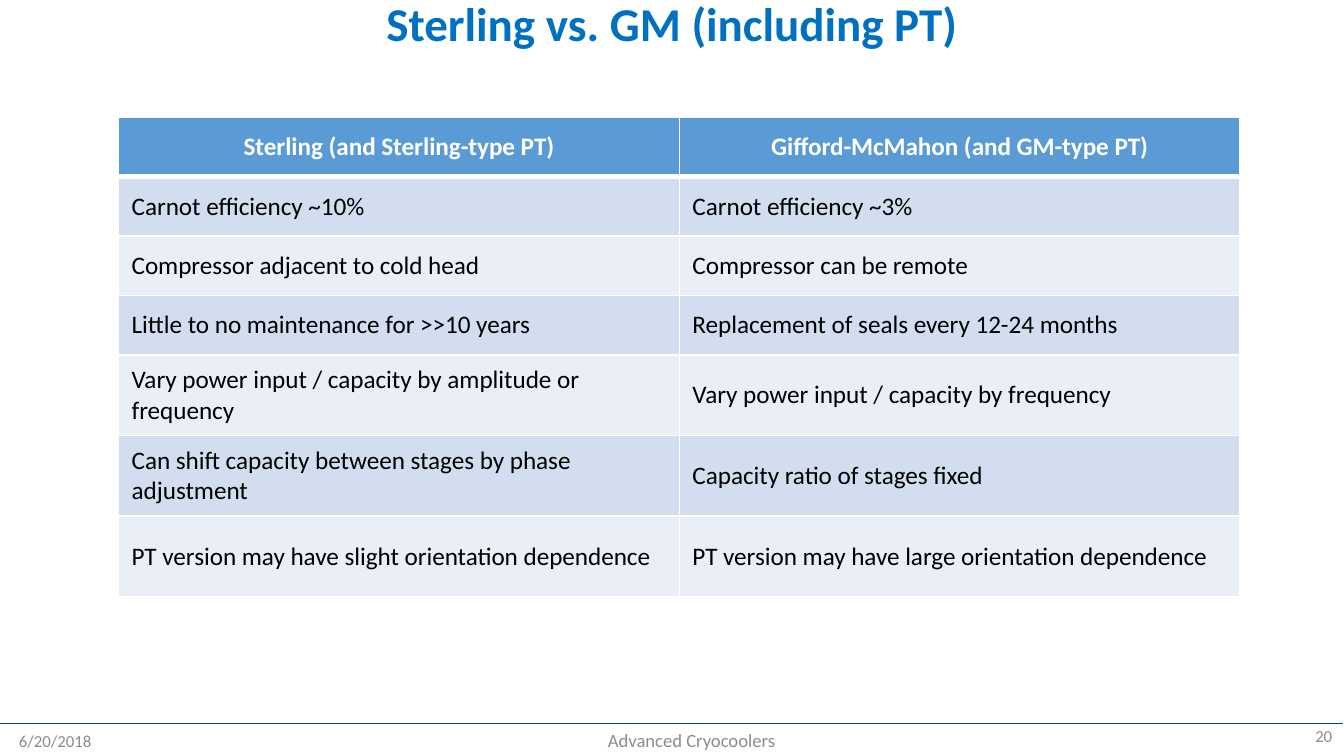
from dataclasses import dataclass

from lxml.etree import SubElement
from pptx import Presentation
from pptx.dml.color import RGBColor
from pptx.enum.text import MSO_ANCHOR, PP_ALIGN
from pptx.oxml.ns import qn
from pptx.util import Pt

SCALE = 2286


@dataclass(frozen=True)
class Theme:
    font: str = "Calibri"
    title: str = "0070C0"
    head: str = "5B9BD5"
    bands: tuple = ("D2DEEF", "EAEFF7")
    white: str = "FFFFFF"
    ink: str = "000000"
    gray: str = "8C8C8C"
    rule: str = "163B71"
    big: float = 25.2
    body: float = 13.5
    note: float = 10
    small: float = 9


def px(n):
    return n * SCALE


def color(code):
    return RGBColor.from_string(code)


class Deck:
    def __init__(self, theme, wide, high):
        self.theme = theme
        self.deck = Presentation()
        self.deck.slide_width = px(wide)
        self.deck.slide_height = px(high)
        self.slide = self.deck.slides.add_slide(self.deck.slide_layouts[5])

    def style(self, frame, size, shade, bold=False, align=PP_ALIGN.CENTER):
        for para in frame.paragraphs:
            para.alignment = align
            for run in para.runs:
                font = run.font
                font.name, font.size, font.bold = self.theme.font, Pt(size), bold
                font.color.rgb = color(shade)

    def title(self, text, x, y, w, h):
        shape = self.slide.shapes.title
        shape.left, shape.top, shape.width, shape.height = map(px, (x, y, w, h))
        frame = shape.text_frame
        frame.text = text
        frame.vertical_anchor = MSO_ANCHOR.MIDDLE
        frame.paragraphs[0].line_spacing = 0.9
        self.style(frame, self.theme.big, self.theme.title, True)

    def label(self, text, x, y, w, h, size, pad=None):
        box = self.slide.shapes.add_textbox(*map(px, (x, y, w, h)))
        frame = box.text_frame
        frame.text = text
        frame.word_wrap = True
        frame.vertical_anchor = MSO_ANCHOR.MIDDLE
        if pad:
            (frame.margin_left, frame.margin_top,
             frame.margin_right, frame.margin_bottom) = map(px, pad)
        self.style(frame, size, self.theme.gray)

    def line(self, x, y, end, low, width):
        rule = self.slide.shapes.add_connector(1, *map(px, (x, y, end, low)))
        rule.line.color.rgb = color(self.theme.rule)
        rule.line.width = Pt(width)
        SubElement(rule._element.spPr, qn("a:effectLst"))

    def edge(self, cell, side, width):
        props = cell._tc.get_or_add_tcPr()
        line = SubElement(props, qn(f"a:ln{side}"), w=str(Pt(width)))
        fill = SubElement(line, qn("a:solidFill"))
        SubElement(fill, qn("a:srgbClr"), val=self.theme.white)

    def cell(self, cell, text, row):
        theme = self.theme
        head = row == 0
        thick = {0: "B", 1: "T"}.get(row)
        for side in "LRTB":
            self.edge(cell, side, 3 if side == thick else 1)
        cell.fill.solid()
        cell.fill.fore_color.rgb = color(
            theme.head if head else theme.bands[(row - 1) % 2])
        cell.vertical_anchor = MSO_ANCHOR.MIDDLE
        cell.margin_left = cell.margin_right = px(39)
        cell.margin_top = cell.margin_bottom = px(20)
        cell.text_frame.text = text
        self.style(cell.text_frame, theme.body,
                   theme.white if head else theme.ink, head,
                   PP_ALIGN.CENTER if head else PP_ALIGN.LEFT)

    def table(self, rows, x, y, wide, highs):
        cols = len(rows[0])
        grid = self.slide.shapes.add_table(
            len(rows), cols, px(x), px(y), px(wide), px(sum(highs))).table
        for col in grid.columns:
            col.width = px(wide) // cols
        for i, (texts, high) in enumerate(zip(rows, highs)):
            grid.rows[i].height = px(high)
            for j, text in enumerate(texts):
                self.cell(grid.cell(i, j), text, i)

    def save(self):
        self.deck.save("out.pptx")


ROWS = [
    ("Sterling (and Sterling-type PT)", "Gifford-McMahon (and GM-type PT)"),
    ("Carnot efficiency ~10%", "Carnot efficiency ~3%"),
    ("Compressor adjacent to cold head", "Compressor can be remote"),
    ("Little to no maintenance for >>10 years",
     "Replacement of seals every 12-24 months"),
    ("Vary power input / capacity by amplitude or frequency",
     "Vary power input / capacity by frequency"),
    ("Can shift capacity between stages by phase adjustment",
     "Capacity ratio of stages fixed"),
    ("PT version may have slight orientation dependence",
     "PT version may have large orientation dependence"),
]


def main():
    theme = Theme()
    deck = Deck(theme, 4000, 2250)
    deck.line(3996, 2152, 0, 2152, 0.5)
    deck.title("Sterling vs. GM (including PT)", 0, 5, 4000, 146)
    deck.table(ROWS, 353, 349, 3338, [177] * 4 + [240] * 3)
    deck.label("6/20/2018", 0, 2160, 328, 92, theme.small)
    deck.label("20", 3880, 2152, 120, 96, theme.small, (0, 0, 0, 20))
    deck.label("Advanced Cryocoolers", 1344, 2156, 1428, 92, theme.note)
    deck.save()


if __name__ == "__main__":
    main()
